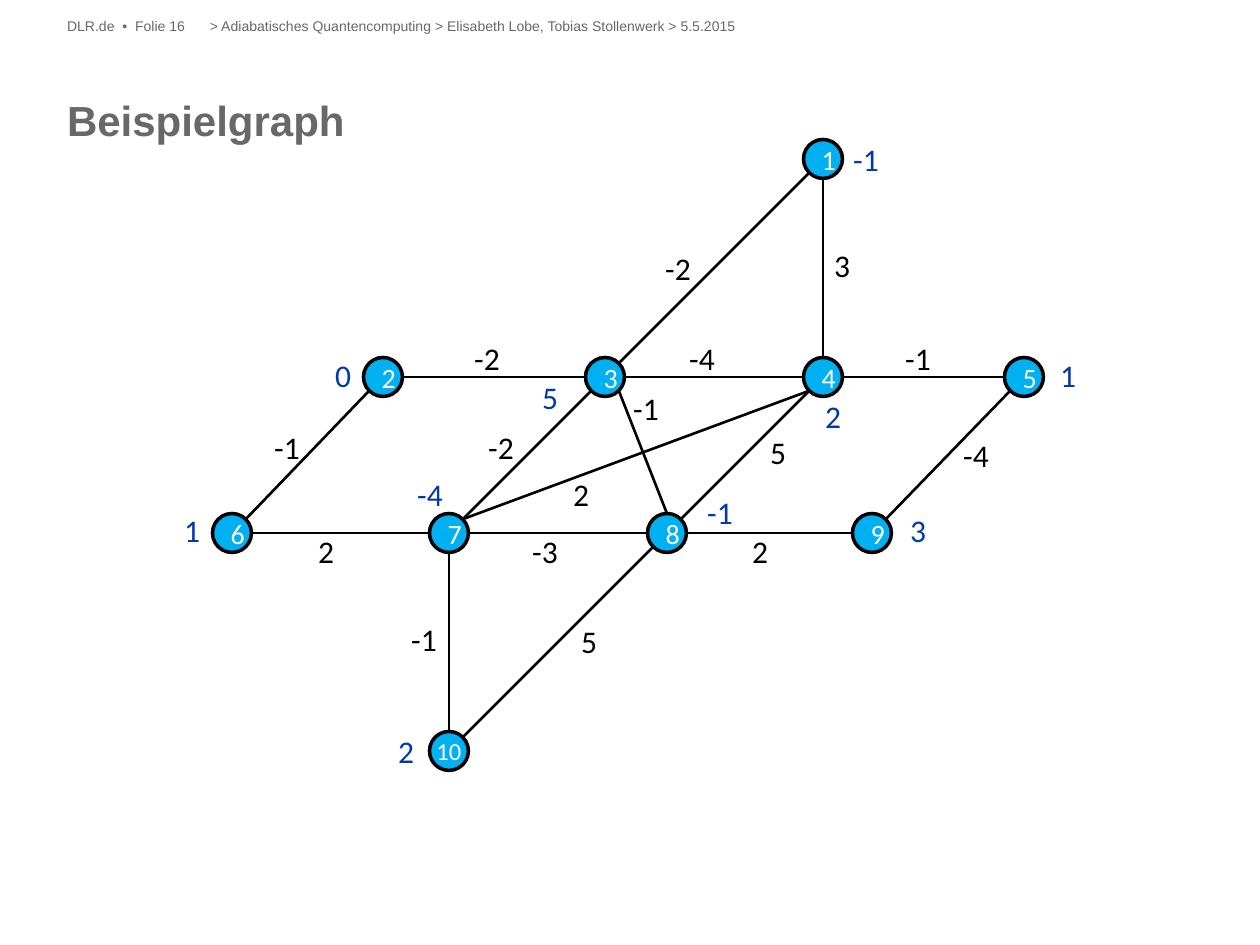
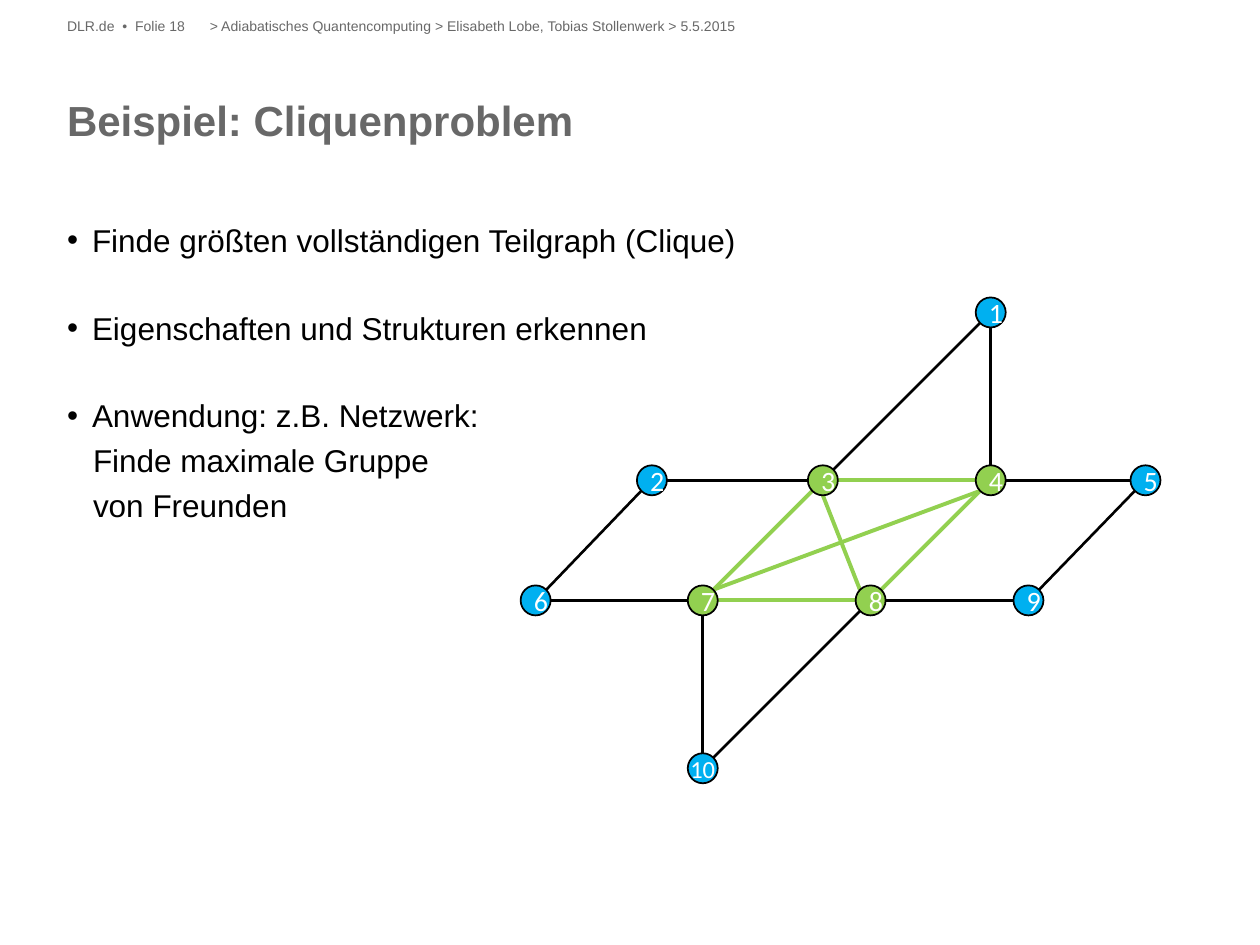
"""Build two slides showing a weighted example graph and its largest clique."""
from lxml.etree import SubElement
from pptx import Presentation
from pptx.dml.color import RGBColor
from pptx.enum.shapes import MSO_CONNECTOR, MSO_SHAPE
from pptx.enum.text import MSO_ANCHOR, MSO_AUTO_SIZE, PP_ALIGN
from pptx.oxml.ns import qn
from pptx.util import Emu, Pt

GREY, BLACK, WHITE = "686868", "000000", "FFFFFF"
NODE_BLUE, LABEL_BLUE, CLIQUE_GREEN = "00B0F0", "0039AC", "92D050"
HEADER = "> Adiabatisches Quantencomputing > Elisabeth Lobe, Tobias Stollenwerk > 5.5.2015"
CLIQUE = {3, 4, 7, 8}
LABEL_HEIGHT = 50

NODES = {
    1: (823, 159), 2: (383, 377), 3: (605, 377), 4: (823, 377), 5: (1024, 377),
    6: (232, 533), 7: (449, 533), 8: (667, 533), 9: (872, 533), 10: (449, 751),
}
SITES = {
    "N": (0, -1), "S": (0, 1), "W": (-1, 0), "E": (1, 0),
    "NW": (-0.71, -0.71), "NE": (0.71, -0.71), "SW": (-0.71, 0.71), "SE": (0.71, 0.71),
}
EDGES = [
    (6, "NE", 2, "SW"), (2, "E", 3, "W"), (6, "E", 7, "W"), (7, "S", 10, "N"),
    (3, "NE", 1, "SW"), (1, "S", 4, "N"), (4, "E", 5, "W"), (8, "E", 9, "W"),
    (10, "NE", 8, "SW"), (9, "NE", 5, "SW"), (7, "NE", 3, "SW"), (7, "E", 8, "W"),
    (8, "NE", 4, "SW"), (3, "E", 4, "W"), (7, "NE", 4, "SW"),
]
NODE_WEIGHTS = [
    ("-1", 866, 159), ("0", 343, 375), ("5", 550, 397), ("2", 833, 416), ("1", 1068, 375),
    ("1", 192, 530), ("-4", 430, 494), ("-1", 720, 512), ("3", 918, 530), ("2", 406, 751),
]
EDGE_WEIGHTS = [
    ("-2", 678, 268), ("3", 842, 265), ("-2", 487, 358), ("-4", 702, 358),
    ("-1", 918, 358), ("-1", 287, 447), ("-2", 501, 447), ("-1", 646, 408),
    ("2", 581, 494), ("5", 778, 452), ("-4", 976, 455), ("2", 326, 551),
    ("-3", 545, 551), ("2", 760, 551), ("-1", 424, 639), ("5", 589, 641),
]
BULLETS = [
    ("Finde größten vollständigen Teilgraph (Clique)", True, 0),
    ("Eigenschaften und Strukturen erkennen", True, 48),
    ("Anwendung: z.B. Netzwerk:", True, 48),
    ("Finde maximale Gruppe", False, 5),
    ("von Freunden", False, 5),
]
PAGES = [
    {"number": 16, "title": "Beispielgraph", "layout": 5, "left": 0, "top": 0, "scale": 1,
     "diameter": 39, "outline": 2, "clique": set(), "diagonal": (3, "SE", 8, "N")},
    {"number": 18, "title": "Beispiel: Cliquenproblem", "layout": 1, "left": 357, "top": 190,
     "scale": 0.77, "diameter": 30, "outline": 1, "clique": CLIQUE,
     "diagonal": (3, "S", 8, "NW")},
]


def px(length):
    """Convert pixels to EMU."""
    return Emu(round(length * 914400 / 126))


def add_span(para, text, size, color, name="Arial", bold=False):
    """Append one formatted run to a paragraph."""
    span = para.add_run()
    span.text = text
    span.font.name = name
    span.font.size = Pt(size)
    span.font.bold = bold
    span.font.color.rgb = RGBColor.from_string(color)


deck = Presentation()
deck.slide_width, deck.slide_height = px(1260), px(945)

for page in PAGES:
    slide = deck.slides.add_slide(deck.slide_layouts[page["layout"]])
    title = slide.shapes.title
    title.left, title.top, title.width, title.height = px(67), px(89), px(1126), px(102)
    para = title.text_frame.paragraphs[0]
    para.alignment = PP_ALIGN.LEFT
    para.line_spacing = 1.1
    add_span(para, page["title"], 24, GREY, bold=True)

    flush_boxes = [title]
    for text, left, width in [(f"DLR.de  •  Folie {page['number']}", 67, 143), (HEADER, 210, 983)]:
        box = slide.shapes.add_textbox(px(left), px(18), px(width), px(20))
        add_span(box.text_frame.paragraphs[0], text, 8, GREY)
        flush_boxes.append(box)

    if page["layout"] == 1:
        body = slide.placeholders[1]
        body.left, body.top, body.width, body.height = px(67), px(219), px(716), px(597)
        flush_boxes.append(body)
        for index, (text, bulleted, gap) in enumerate(BULLETS):
            para = body.text_frame.paragraphs[0] if index == 0 else body.text_frame.add_paragraph()
            para.line_spacing = 1.05
            para.space_before = px(gap)
            properties = para._p.get_or_add_pPr()
            properties.set("marL", str(px(25 if bulleted else 26)))
            properties.set("indent", str(px(-25 if bulleted else 0)))
            if bulleted:
                SubElement(properties, qn("a:buChar"), char="•")
            else:
                SubElement(properties, qn("a:buNone"))
            add_span(para, text, 18, BLACK)

    for box in flush_boxes:
        frame = box.text_frame
        frame.margin_left = frame.margin_right = frame.margin_top = frame.margin_bottom = 0
        frame.vertical_anchor = MSO_ANCHOR.TOP
        frame.auto_size = MSO_AUTO_SIZE.NONE
        frame.word_wrap = True

    if page["number"] == 16:
        for weights, color in [(NODE_WEIGHTS, LABEL_BLUE), (EDGE_WEIGHTS, BLACK)]:
            for text, x, y in weights:
                width = 52 if text.startswith("-") else 42
                label = slide.shapes.add_textbox(
                    px(x - width / 2), px(y - LABEL_HEIGHT / 2), px(width), px(LABEL_HEIGHT))
                label.text_frame.word_wrap = False
                para = label.text_frame.paragraphs[0]
                para.alignment = PP_ALIGN.CENTER
                add_span(para, text, 18, color, "Calibri")

    radius = page["diameter"] / 2
    centers = {
        node: (page["left"] + page["scale"] * x, page["top"] + page["scale"] * y)
        for node, (x, y) in NODES.items()
    }
    for start, start_site, end, end_site in EDGES + [page["diagonal"]]:
        ends = [
            px(center + radius * offset)
            for node, site in [(start, start_site), (end, end_site)]
            for center, offset in zip(centers[node], SITES[site])
        ]
        edge = slide.shapes.add_connector(MSO_CONNECTOR.STRAIGHT, *ends)
        in_clique = {start, end} <= page["clique"]
        edge.line.color.rgb = RGBColor.from_string(CLIQUE_GREEN if in_clique else BLACK)
        edge.line.width = Pt(2.25 if in_clique else 1.5)
        SubElement(edge._element.spPr, qn("a:effectLst"))

    for node, (x, y) in centers.items():
        circle = slide.shapes.add_shape(
            MSO_SHAPE.OVAL, px(x - radius), px(y - radius), px(2 * radius), px(2 * radius))
        circle.shadow.inherit = False
        circle.fill.solid()
        circle.fill.fore_color.rgb = RGBColor.from_string(
            CLIQUE_GREEN if node in page["clique"] else NODE_BLUE)
        circle.line.color.rgb = RGBColor.from_string(BLACK)
        circle.line.width = Pt(page["outline"])
        circle.text_frame.word_wrap = node < 10
        circle.text_frame.vertical_anchor = MSO_ANCHOR.MIDDLE
        para = circle.text_frame.paragraphs[0]
        para.alignment = PP_ALIGN.CENTER
        add_span(para, str(node), 16 if node < 10 else 14, WHITE, "Calibri")

deck.save("out.pptx")
